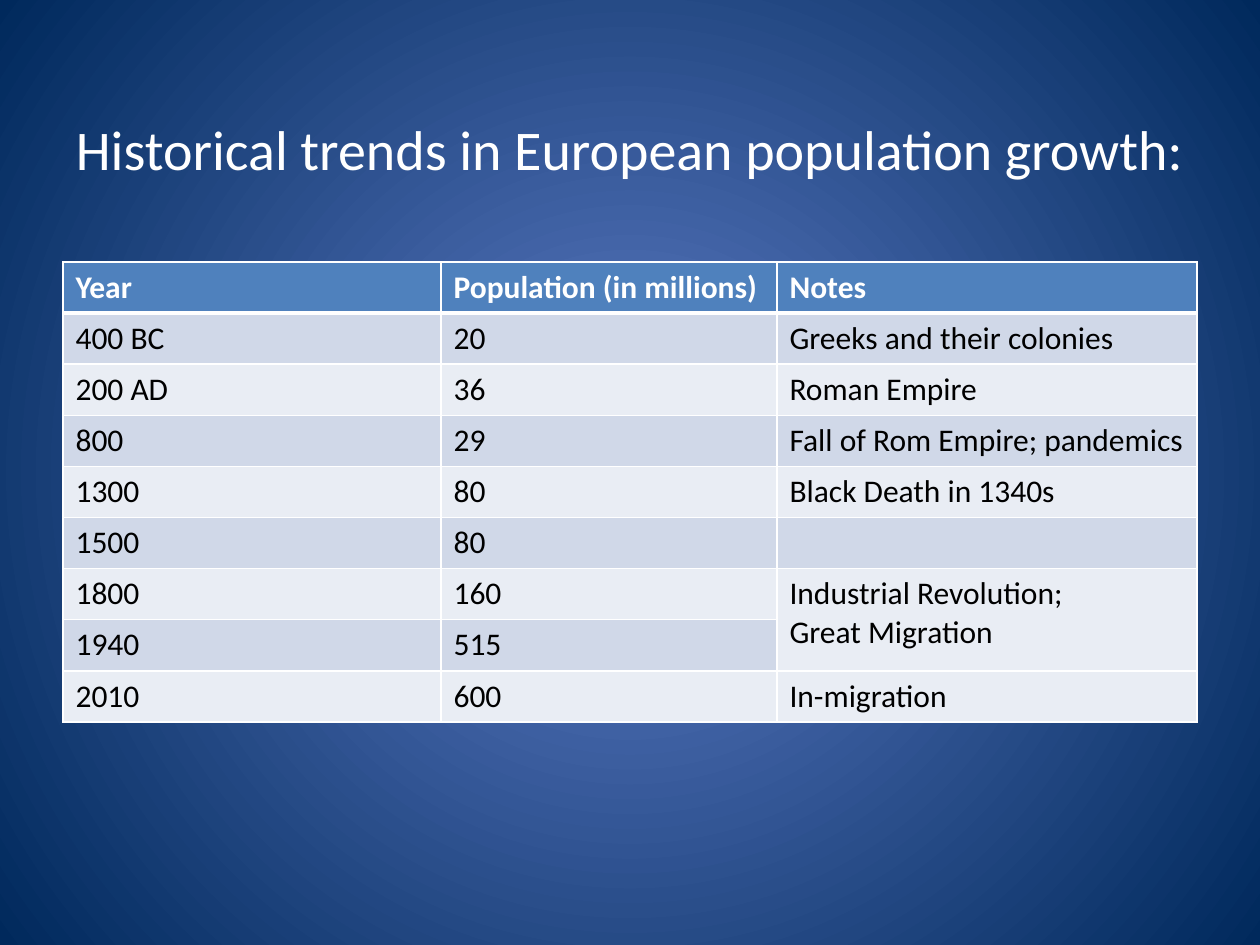
"""Build a slide with a table of European population through history."""
from dataclasses import dataclass

from lxml import etree
from pptx import Presentation
from pptx.dml.color import RGBColor
from pptx.enum.text import MSO_ANCHOR, PP_ALIGN
from pptx.oxml.ns import qn
from pptx.util import Pt

MIDDLE = MSO_ANCHOR.MIDDLE
CENTER = PP_ALIGN.CENTER
PX = 914400 / 126


@dataclass(frozen=True)
class Theme:
    font: str = "Calibri"
    title_size: int = 32
    table_size: int = 18
    white: str = "FFFFFF"
    black: str = "000000"
    glow: str = "5E7CC5"
    navy: str = "00295C"
    header: str = "4F81BD"
    bands: tuple = ("E9EDF4", "D0D8E8")
    rule: int = 1
    header_rule: int = 3


def px(n):
    return round(n * PX)


def set_font(p, size, color, bold=False):
    p.font.name = theme.font
    p.font.size = Pt(size)
    p.font.bold = bold
    p.font.color.rgb = RGBColor.from_string(color)


theme = Theme()
ROWS = [
    ("Year", "Population (in millions)", "Notes"),
    ("400 BC", "20", "Greeks and their colonies"),
    ("200 AD", "36", "Roman Empire"),
    ("800", "29", "Fall of Rom Empire; pandemics"),
    ("1300", "80", "Black Death in 1340s"),
    ("1500", "80", ""),
    ("1800", "160", "Industrial Revolution;\nGreat Migration"),
    ("1940", "515", ""),
    ("2010", "600", "In-migration"),
]
COL_WIDTHS = (378, 336, 420)
ROW_HEIGHT = 51

prs = Presentation()
prs.slide_width, prs.slide_height = px(1260), px(945)
s = prs.slides.add_slide(prs.slide_layouts[5])

fill = s.background.fill
fill.gradient()
for stop, color in zip(fill.gradient_stops, (theme.glow, theme.navy)):
    stop.color.rgb = RGBColor.from_string(color)
grad = s.element.find(".//" + qn("a:gradFill"))
grad.remove(grad.find(qn("a:lin")))
path = etree.SubElement(grad, qn("a:path"), path="circle")
etree.SubElement(path, qn("a:fillToRect"), l="50000", t="50000", r="50000", b="50000")

title = s.shapes.title
title.left, title.top, title.width, title.height = px(31), px(69), px(1198), px(158)
tf = title.text_frame
tf.text = "Historical trends in European population growth:"
tf.vertical_anchor = MIDDLE
p = tf.paragraphs[0]
p.alignment = CENTER
set_font(p, theme.title_size, theme.white)

table = s.shapes.add_table(
    len(ROWS), len(COL_WIDTHS), px(63), px(262), px(sum(COL_WIDTHS)), px(ROW_HEIGHT * len(ROWS))
).table
for col, width in zip(table.columns, COL_WIDTHS):
    col.width = px(width)
for row in table.rows:
    row.height = px(ROW_HEIGHT)

for i, row in enumerate(ROWS):
    is_header = i == 0
    for j, text in enumerate(row):
        cell = table.cell(i, j)
        cell.text = text
        for p in cell.text_frame.paragraphs:
            set_font(p, theme.table_size, theme.white if is_header else theme.black, is_header)
        tcPr = cell._tc.get_or_add_tcPr()
        for side in "LRTB":
            under_header = (i, side) in ((0, "B"), (1, "T"))
            weight = theme.header_rule if under_header else theme.rule
            ln = etree.SubElement(tcPr, qn(f"a:ln{side}"), w=str(Pt(weight)))
            solid = etree.SubElement(ln, qn("a:solidFill"))
            etree.SubElement(solid, qn("a:srgbClr"), val=theme.white)
        cell.fill.solid()
        color = theme.header if is_header else theme.bands[i % 2]
        cell.fill.fore_color.rgb = RGBColor.from_string(color)
table.cell(6, 2).merge(table.cell(7, 2))

prs.save("out.pptx")
